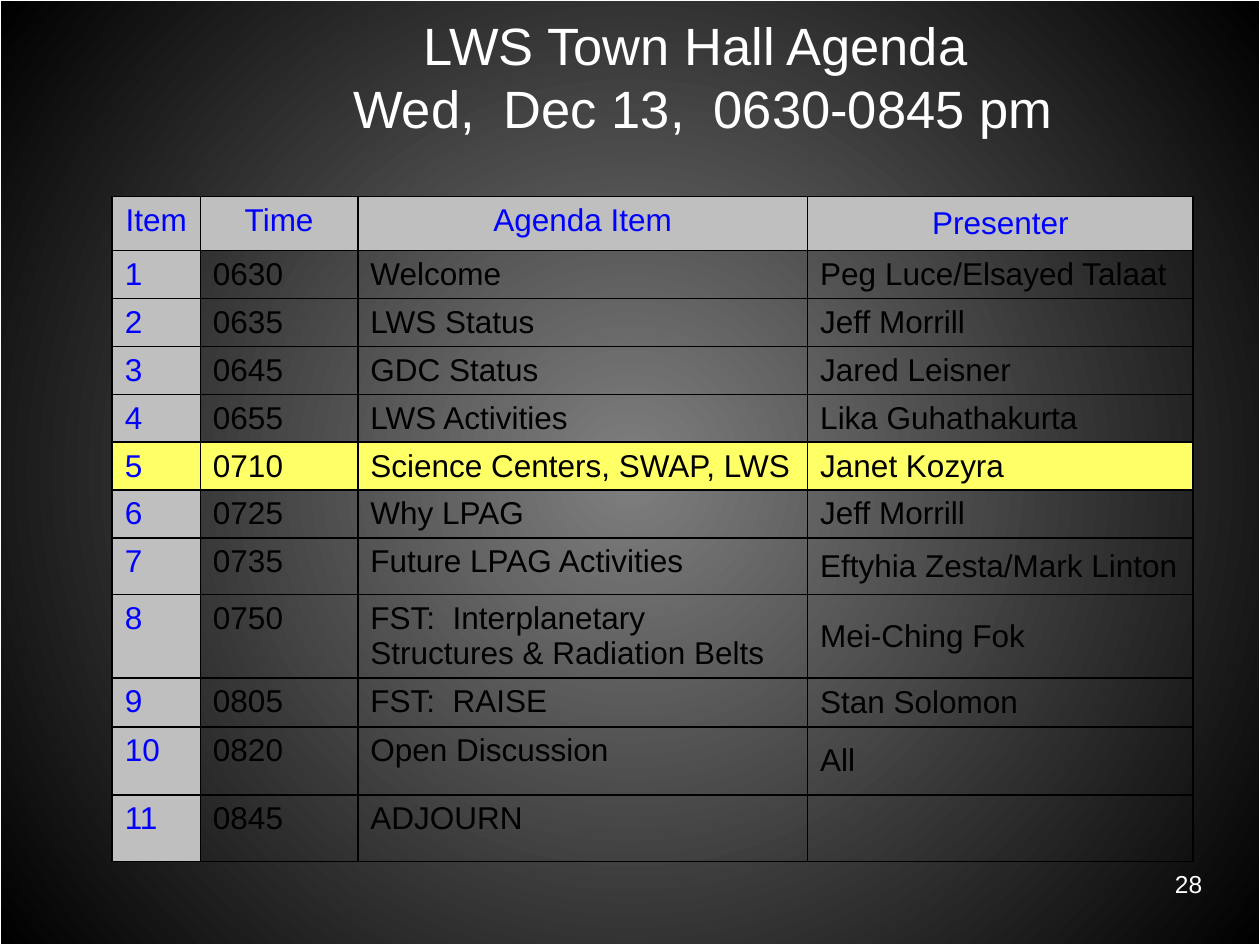
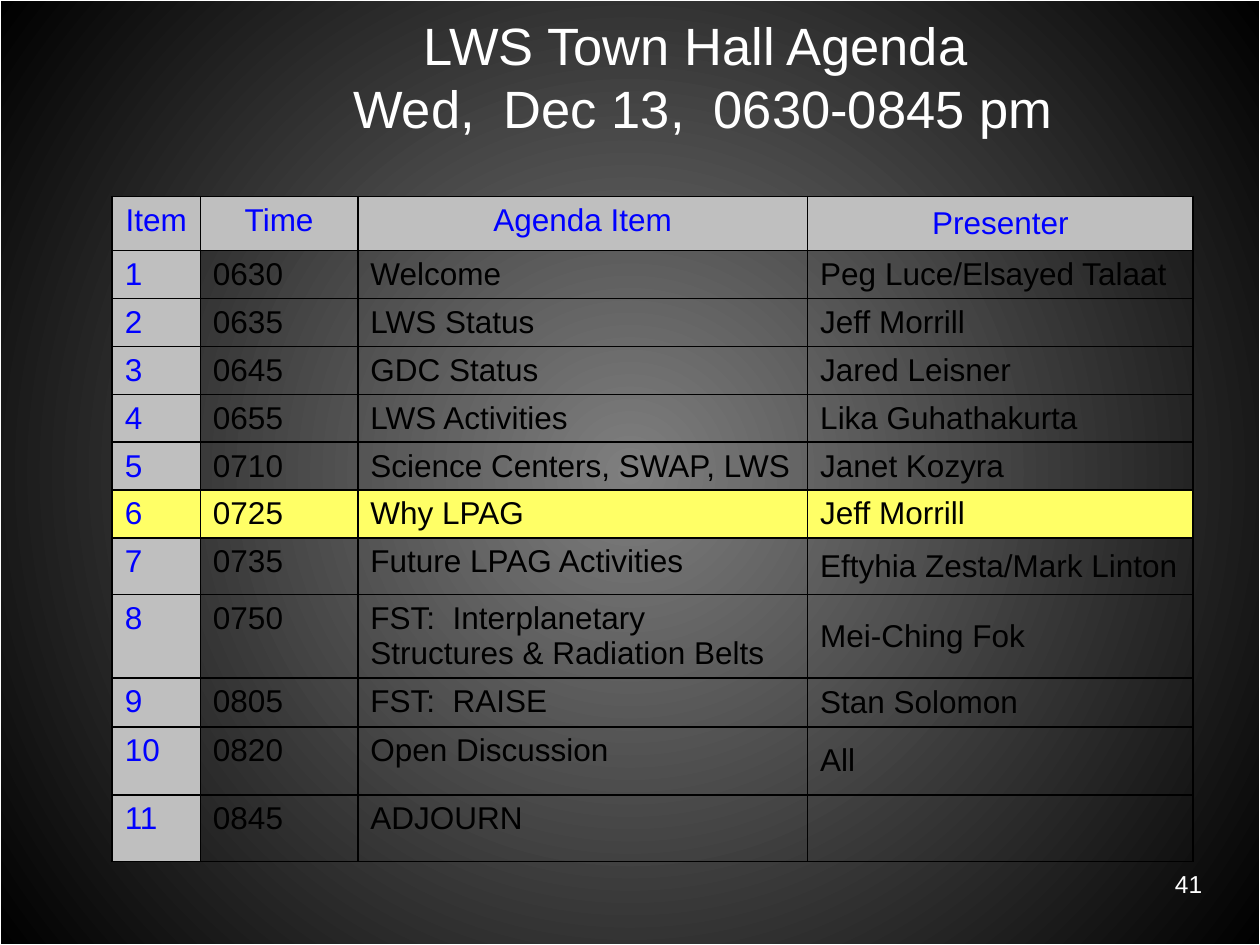
"""Builds two agenda slides that each highlight the current item."""
from lxml import etree
from pptx import Presentation
from pptx.dml.color import RGBColor
from pptx.enum.shapes import MSO_SHAPE
from pptx.enum.text import MSO_ANCHOR, MSO_AUTO_SIZE, PP_ALIGN
from pptx.oxml import parse_xml
from pptx.oxml.ns import nsdecls, qn
from pptx.util import Inches, Pt

COLOURS = {
    "glow": "7F7F7F",
    "black": "000000",
    "white": "FFFFFF",
    "blue": "0000FF",
    "grey": "BFBFBF",
    "highlight": "FFFF66",
}
FONT = "Arial"
TITLE = "LWS Town Hall Agenda \vWed,  Dec 13,  0630-0845 pm"
HEADINGS = ("Item", "Time", "Agenda Item", "Presenter")
AGENDA = [
    ("0630", "Welcome", "Peg Luce/Elsayed Talaat"),
    ("0635", "LWS Status", "Jeff Morrill"),
    ("0645", "GDC Status", "Jared Leisner"),
    ("0655", "LWS Activities", "Lika Guhathakurta"),
    ("0710", "Science Centers, SWAP, LWS", "Janet Kozyra"),
    ("0725", "Why LPAG", "Jeff Morrill"),
    ("0735", "Future LPAG Activities", "Eftyhia Zesta/Mark Linton"),
    ("0750", "FST:  Interplanetary Structures & Radiation Belts", "Mei-Ching Fok"),
    ("0805", "FST:  RAISE", "Stan Solomon"),
    ("0820", "Open Discussion", "All"),
    ("0845", "ADJOURN", ""),
]
COLUMN_WIDTHS = (0.7, 1.25, 3.57, 3.06)
ROW_HEIGHTS = (0.43, *[0.38] * 6, 0.45, 0.66, 0.39, 0.54, 0.53)


def colour(name):
    return RGBColor.from_string(COLOURS[name])


class AgendaDeck:
    def __init__(self):
        self.prs = Presentation()
        self.prs.slide_width, self.prs.slide_height = Inches(10), Inches(7.5)
        self.slide = None
        self.set_background()

    def set_background(self):
        master = self.prs.slide_master
        fill = master.background.fill
        fill.gradient()
        for stop, name in zip(fill.gradient_stops, ("glow", "black")):
            stop.color.rgb = colour(name)
        gradient = master.element.find(".//" + qn("a:gradFill"))
        gradient.remove(gradient.find(qn("a:lin")))
        circle = etree.SubElement(gradient, qn("a:path"), path="circle")
        etree.SubElement(circle, qn("a:fillToRect"),
                         {side: "50000" for side in "ltrb"})

    def add_slide(self):
        self.slide = self.prs.slides.add_slide(self.prs.slide_layouts[5])

    def style(self, frame, size, name, align):
        for paragraph in frame.paragraphs:
            paragraph.alignment = align
            for run in paragraph.runs:
                run.font.name = FONT
                run.font.size = Pt(size)
                run.font.color.rgb = colour(name)

    def frame_edge(self):
        edge = self.slide.shapes.add_shape(
            MSO_SHAPE.RECTANGLE, 0, 0, self.prs.slide_width, self.prs.slide_height)
        edge.shadow.inherit = False
        edge.fill.background()
        edge.line.color.rgb = colour("white")
        edge.line.width = Pt(0.75)

    def page_number(self, number):
        page = self.slide.shapes.add_textbox(
            Inches(7.56), Inches(6.85), Inches(2.08), Inches(0.39)).text_frame
        page.word_wrap = True
        page.text = str(number)
        self.style(page, 14, "white", PP_ALIGN.RIGHT)

    def title(self, text):
        heading = self.slide.shapes.title
        heading.left, heading.top = Inches(1.13), Inches(0.14)
        heading.width, heading.height = Inches(8.9), Inches(0.93)
        frame = heading.text_frame
        frame.text = text
        frame.auto_size = MSO_AUTO_SIZE.NONE
        frame.vertical_anchor = MSO_ANCHOR.MIDDLE
        self.style(frame, 30, "white", PP_ALIGN.CENTER)

    def outline(self, cell):
        properties = cell._tc.get_or_add_tcPr()
        for side in "LRTB":
            properties.append(parse_xml(
                f'<a:ln{side} {nsdecls("a")} w="{Pt(1)}"><a:solidFill>'
                f'<a:srgbClr val="{COLOURS["black"]}"/></a:solidFill></a:ln{side}>'))

    def cell(self, cell, text, name, fill, align, centred):
        self.outline(cell)
        if fill:
            cell.fill.solid()
            cell.fill.fore_color.rgb = colour(fill)
        else:
            cell.fill.background()
        cell.vertical_anchor = MSO_ANCHOR.MIDDLE if centred else MSO_ANCHOR.TOP
        cell.margin_top = Inches(0.03 if centred else 0.05)
        cell.margin_bottom = Inches(0.03 if centred else 0)
        cell.text = text
        self.style(cell.text_frame, 18, name, align)

    def agenda(self, current_item):
        rows = [HEADINGS] + [(str(i), *row) for i, row in enumerate(AGENDA, 1)]
        table = self.slide.shapes.add_table(
            len(rows), len(HEADINGS), Inches(0.89), Inches(1.56),
            Inches(sum(COLUMN_WIDTHS)), Inches(sum(ROW_HEIGHTS))).table
        table.first_row = table.horz_banding = False
        for column, width in zip(table.columns, COLUMN_WIDTHS):
            column.width = Inches(width)
        for row, height in zip(table.rows, ROW_HEIGHTS):
            row.height = Inches(height)
        for item, row in enumerate(rows):
            for c, text in enumerate(row):
                is_label = item == 0 or c == 0
                fill = "grey" if is_label else None
                self.cell(
                    table.cell(item, c), text,
                    "blue" if is_label else "black",
                    "highlight" if item == current_item else fill,
                    PP_ALIGN.CENTER if item == 0 else PP_ALIGN.LEFT,
                    centred=c == 3)


def main():
    deck = AgendaDeck()
    for page, current_item in ((28, 5), (41, 6)):
        deck.add_slide()
        deck.frame_edge()
        deck.page_number(page)
        deck.title(TITLE)
        deck.agenda(current_item)
    deck.prs.save("out.pptx")


if __name__ == "__main__":
    main()
